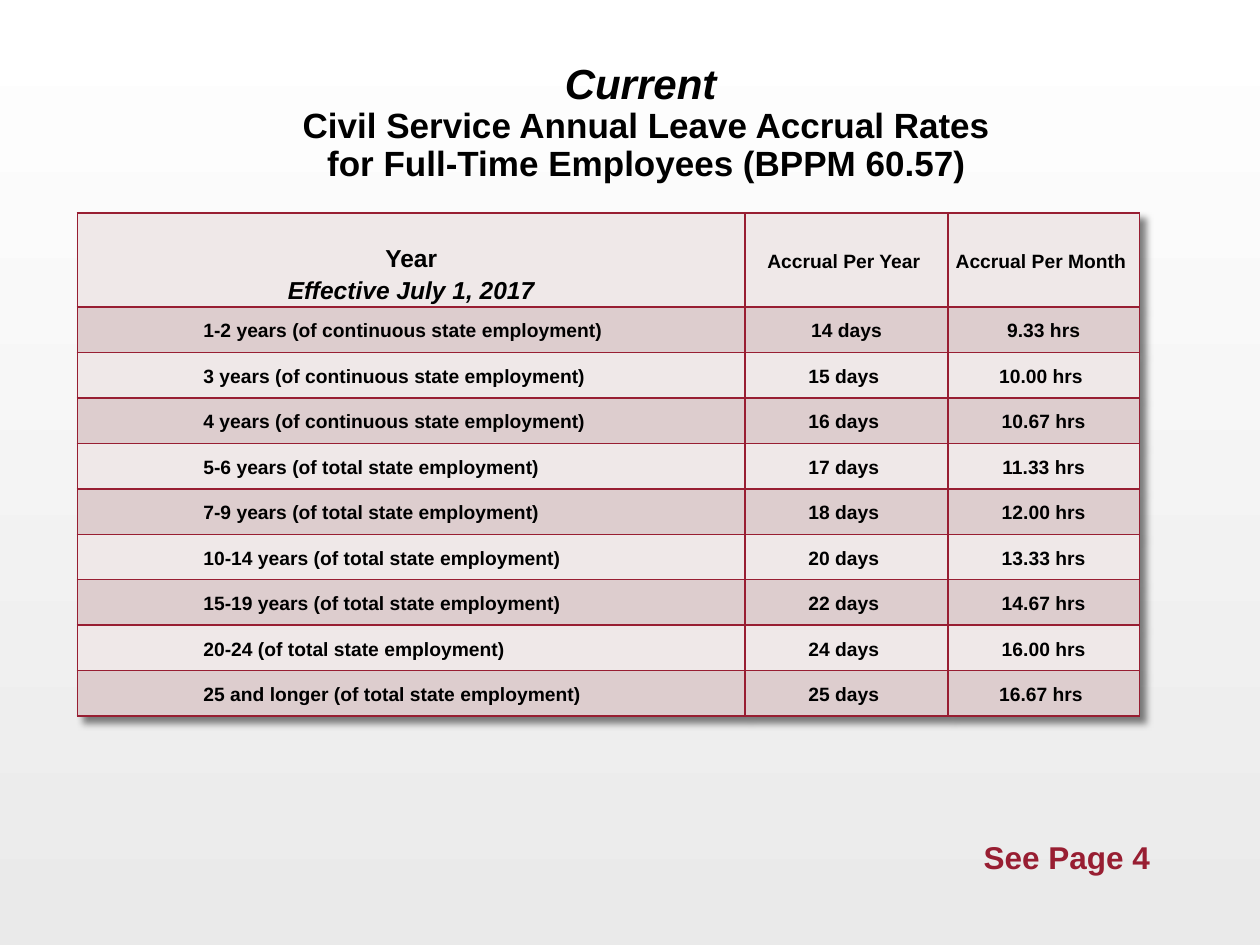
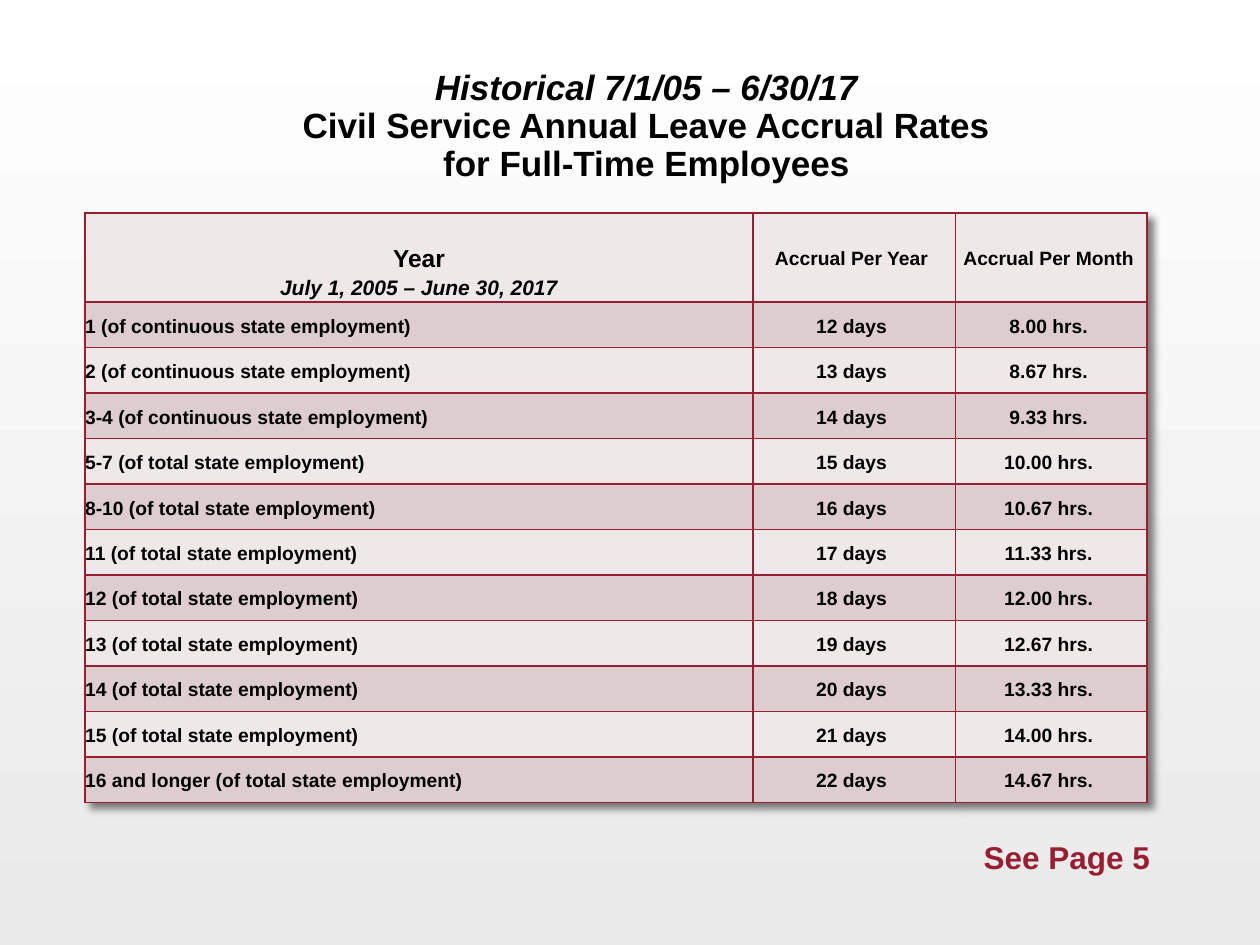
import pptx
import pptx.dml.color
import pptx.enum.text
import pptx.oxml
import pptx.util
from lxml import etree

Pt = pptx.util.Pt
ALIGN = pptx.enum.text.PP_ALIGN
ANCHOR = pptx.enum.text.MSO_ANCHOR
SIZING = pptx.enum.text.MSO_AUTO_SIZE
NS = 'xmlns:a="http://schemas.openxmlformats.org/drawingml/2006/main"'

FONT = "Arial"
BLACK, CRIMSON = "000000", "981E32"
PALE, ROSE = "EFE8E8", "DDCDCE"
FADE = ("EAEAEA", "FFFFFF")
COLS = (381.6, 115.9, 109.4)
HEAD_ROW, BODY_ROW = 37.4, 26
HEADS = ("Accrual Per Year ", "Accrual Per Month ")

CURRENT = [
    ("1-2 years (of continuous state employment)", "14 days", "9.33 hrs"),
    ("3 years (of continuous state employment)", "15 days ", "10.00 hrs "),
    ("4 years (of continuous state employment)", "16 days ", "10.67 hrs"),
    ("5-6 years (of total state employment)", "17 days ", "11.33 hrs"),
    ("7-9 years (of total state employment)", "18 days ", "12.00 hrs"),
    ("10-14 years (of total state employment)", "20 days ", "13.33 hrs"),
    ("15-19 years (of total state employment)", "22 days ", "14.67 hrs"),
    ("20-24 (of total state employment)", "24 days ", "16.00 hrs"),
    ("25 and longer (of total state employment)", "25 days ", "16.67 hrs "),
]
PAST = [
    ("1 (of continuous state employment)", "12 days ", "8.00 hrs. "),
    ("2 (of continuous state employment)", "13 days ", "8.67 hrs. "),
    ("3-4 (of continuous state employment)", "14 days ", "9.33 hrs. "),
    ("5-7 (of total state employment)", "15 days ", "10.00 hrs. "),
    ("8-10 (of total state employment)", "16 days ", "10.67 hrs. "),
    ("11 (of total state employment)", "17 days ", "11.33 hrs. "),
    ("12 (of total state employment)", "18 days ", "12.00 hrs. "),
    ("13 (of total state employment)", "19 days ", "12.67 hrs. "),
    ("14 (of total state employment)", "20 days ", "13.33 hrs. "),
    ("15 (of total state employment)", "21 days ", "14.00 hrs. "),
    ("16 and longer (of total state employment)", "22 days ", "14.67 hrs. "),
]


def color(code):
    return pptx.dml.color.RGBColor.from_string(code)


def style(para, size, hue=BLACK, align=ALIGN.LEFT, line=1.0):
    para.alignment = align
    para.line_spacing = line
    font = para.font
    font.name, font.size, font.bold = FONT, Pt(size), True
    font.color.rgb = color(hue)


def add_slide(deck):
    """Add a blank slide with the shared gradient behind it."""
    slide = deck.slides.add_slide(deck.slide_layouts[6])
    fill = slide.background.fill
    fill.gradient()
    fill.gradient_angle = 90
    for stop, code in zip(fill.gradient_stops, FADE):
        stop.color.rgb = color(code)
    return slide


def add_title(slide, lead, rest, size):
    """Add the title; its italic first line has its own size."""
    box = slide.shapes.add_textbox(Pt(63.4), Pt(32), Pt(612), Pt(76.7))
    frame = box.text_frame
    frame.word_wrap = True
    frame.vertical_anchor = ANCHOR.BOTTOM
    frame.margin_left = frame.margin_right = Pt(36)
    para = frame.paragraphs[0]
    para.text = f"{lead}\v{rest}"
    style(para, 20, align=ALIGN.CENTER, line=0.9)
    font = para.runs[0].font
    font.italic, font.size = True, Pt(size)


def add_note(slide, text):
    box = slide.shapes.add_textbox(Pt(555), Pt(475.2), Pt(110.2), Pt(29))
    frame = box.text_frame
    frame.word_wrap = False
    frame.auto_size = SIZING.SHAPE_TO_FIT_TEXT
    para = frame.paragraphs[0]
    para.text = text
    style(para, 18, CRIMSON)


def add_edges(cell):
    props = cell._tc.get_or_add_tcPr()
    for spot, side in enumerate(("lnL", "lnR", "lnT", "lnB")):
        props.insert(spot, pptx.oxml.parse_xml(
            f'<a:{side} {NS} w="{Pt(1)}"><a:solidFill>'
            f'<a:srgbClr val="{CRIMSON}"/></a:solidFill></a:{side}>'))


def add_shadow(table):
    shade = etree.fromstring(
        f'<a:effectLst {NS}><a:outerShdw blurRad="{Pt(4)}" dist="{Pt(5)}" '
        'dir="2700000" algn="tl" rotWithShape="0"><a:srgbClr val="000000">'
        '<a:alpha val="50000"/></a:srgbClr></a:outerShdw></a:effectLst>')
    table._tbl.tblPr.insert(0, shade)


def fill_cell(cell, text, tint, align=ALIGN.CENTER, inset=0):
    cell.margin_left = Pt(inset)
    cell.margin_right = cell.margin_top = cell.margin_bottom = 0
    cell.vertical_anchor = ANCHOR.MIDDLE
    cell.fill.solid()
    cell.fill.fore_color.rgb = color(tint)
    add_edges(cell)
    para = cell.text_frame.paragraphs[0]
    para.text = text
    style(para, 11, align=align, line=1.15)
    if align == ALIGN.CENTER:
        para.space_after = Pt(10)


def fill_head(cell, span, size):
    """Fill the year heading, with its span of dates below in italics."""
    fill_cell(cell, "Year", PALE)
    cell.margin_top = Pt(15)
    year = cell.text_frame.paragraphs[0]
    year.font.size = Pt(14)
    year.space_after = Pt(0)
    dates = cell.text_frame.add_paragraph()
    dates.text = span
    style(dates, size, align=ALIGN.CENTER, line=1.15)
    dates.font.italic = True


def add_rates(slide, left, span, size, rates, inset):
    high = HEAD_ROW + BODY_ROW * len(rates)
    table = slide.shapes.add_table(
        len(rates) + 1, len(COLS), Pt(left), Pt(121.7),
        Pt(sum(COLS)), Pt(high)).table
    add_shadow(table)
    for col, wide in zip(table.columns, COLS):
        col.width = Pt(wide)
    for row in table.rows:
        row.height = Pt(BODY_ROW)
    table.rows[0].height = Pt(HEAD_ROW)
    fill_head(table.cell(0, 0), span, size)
    for col, text in enumerate(HEADS, 1):
        fill_cell(table.cell(0, col), text, PALE)
    for row, (term, *rate) in enumerate(rates, 1):
        tint = ROSE if row % 2 else PALE
        fill_cell(table.cell(row, 0), term, tint, ALIGN.LEFT, inset)
        for col, text in enumerate(rate, 1):
            fill_cell(table.cell(row, col), text, tint)


def main():
    deck = pptx.Presentation()
    deck.slide_width, deck.slide_height = Pt(720), Pt(540)
    name = "Civil Service Annual Leave Accrual Rates\vfor Full-Time Employees"

    slide = add_slide(deck)
    add_title(slide, "Current ", name + " (BPPM 60.57)", 24)
    add_rates(slide, 44.2, "Effective July 1, 2017", 14, CURRENT, 72)
    add_note(slide, "See Page 4")

    slide = add_slide(deck)
    add_title(slide, "Historical 7/1/05 – 6/30/17", name, 20)
    add_rates(slide, 48.6, "July 1, 2005 – June 30, 2017", 12, PAST, 0)
    add_note(slide, "See Page 5")

    deck.save("out.pptx")


if __name__ == "__main__":
    main()
